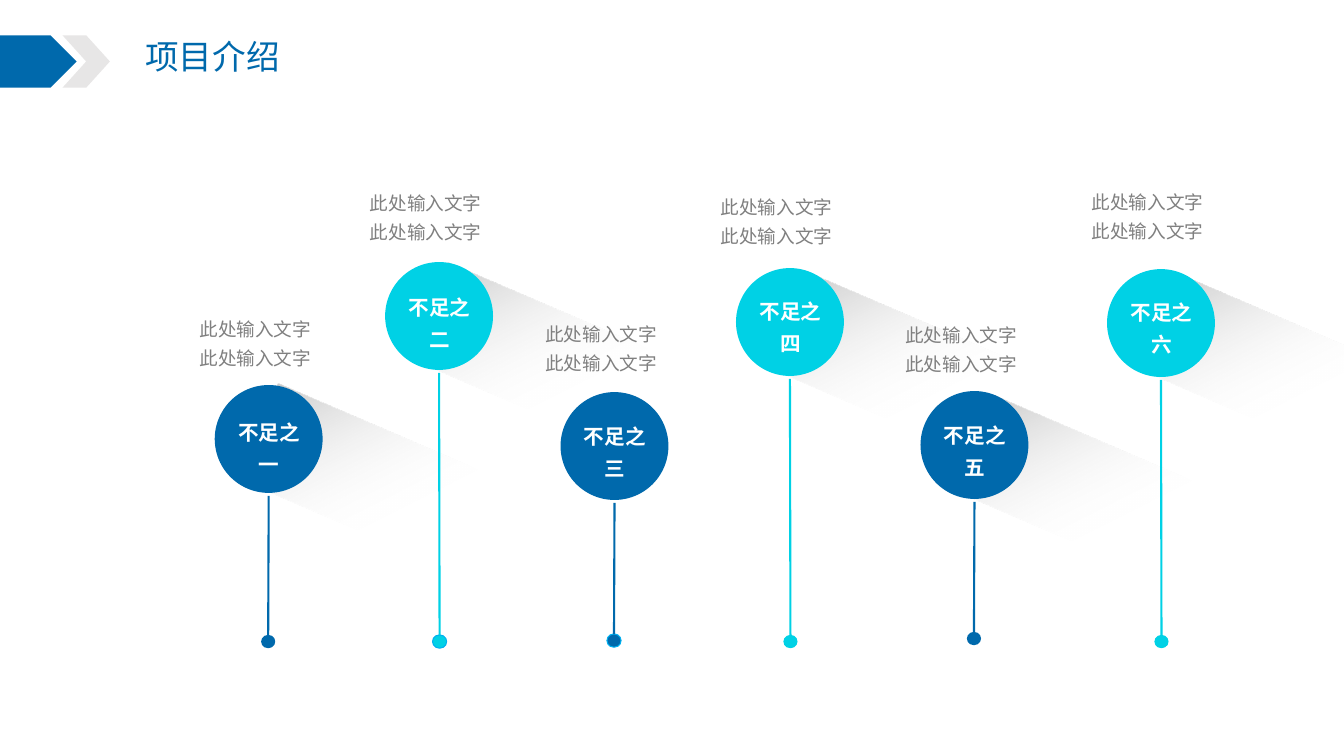
from lxml import etree
from pptx import Presentation
from pptx.dml.color import RGBColor
from pptx.enum import shapes, text
from pptx.oxml import ns
from pptx.util import Inches, Pt

FONT = "Noto Sans CJK SC"
BLUE, CYAN, GREY, SILVER, WHITE = "0069AC", "00D1E5", "808080", "E7E6E6", "FFFFFF"
DOT_OUTLINE = "00B0F0"
TITLE = "项目介绍"
CAPTION = ["此处输入文字", "此处输入文字"]
DIAMETER, DOT_WIDTH, DOT_HEIGHT, STEM_GAP = 1.07, 0.14, 0.13, 0.03

# label, colour, circle (left, top), label top, caption top, dot (left, top), outlined, shadow (left, top)
PINS = [
    ("不足之一", BLUE, (2.13, 3.82), 4.06, 3.04, (2.59, 6.3), False, (2.43, 4.38)),
    ("不足之二", CYAN, (3.82, 2.6), 2.82, 1.79, (4.29, 6.3), True, (4.12, 3.18)),
    ("不足之三", BLUE, (5.56, 3.89), 4.1, 3.09, (6.02, 6.29), True, None),
    ("不足之四", CYAN, (7.3, 2.66), 2.86, 1.83, (7.77, 6.3), False, (7.67, 3.27)),
    ("不足之五", BLUE, (9.13, 3.88), 4.09, 3.1, (9.59, 6.27), False, (9.51, 4.49)),
    ("不足之六", CYAN, (10.98, 2.67), 2.87, 1.78, (11.45, 6.3), False, (11.31, 3.27)),
]


def colour(value):
    return RGBColor.from_string(value)


def add_block(kind, left, top, width, height, fill, outline=None):
    shape = slide.shapes.add_shape(kind, Inches(left), Inches(top), Inches(width), Inches(height))
    shape.shadow.inherit = False
    shape.fill.solid()
    shape.fill.fore_color.rgb = colour(fill)
    if outline:
        shape.line.color.rgb = colour(outline)
        shape.line.width = Pt(0.75)
    else:
        shape.line.fill.background()
    return shape


def add_shadow(left, top):
    shape = add_block(shapes.MSO_SHAPE.RECTANGLE, left, top, 3.11, 1.02, WHITE)
    shape.rotation = 23.3
    gradient = etree.fromstring(
        f'<a:gradFill xmlns:a="{ns.nsuri("a")}" rotWithShape="1"><a:gsLst>'
        '<a:gs pos="0"><a:srgbClr val="BFBFBF"/></a:gs>'
        '<a:gs pos="54000"><a:srgbClr val="FFFFFF"><a:alpha val="0"/></a:srgbClr></a:gs>'
        '</a:gsLst><a:lin ang="2400000" scaled="0"/></a:gradFill>')
    properties = shape.element.spPr
    properties.replace(properties.find(ns.qn("a:solidFill")), gradient)


def write(frame, lines, size, fill, bold=False, align=text.PP_ALIGN.LEFT, spacing=1.0,
          margins=(0.1, 0.05), anchor=text.MSO_ANCHOR.TOP, wrap=True):
    frame.word_wrap = wrap
    frame.auto_size = text.MSO_AUTO_SIZE.NONE
    frame.vertical_anchor = anchor
    frame.margin_left = frame.margin_right = Inches(margins[0])
    frame.margin_top = frame.margin_bottom = Inches(margins[1])
    for index, line in enumerate(lines):
        paragraph = frame.add_paragraph() if index else frame.paragraphs[0]
        paragraph.alignment = align
        paragraph.line_spacing = spacing
        run = paragraph.add_run()
        run.text = line
        run.font.name = FONT
        run.font.size = Pt(size)
        run.font.bold = bold
        run.font.color.rgb = colour(fill)
        east_asian = etree.SubElement(run.font._element, ns.qn("a:ea"))
        east_asian.set("typeface", FONT)


def add_text(left, top, width, height, lines, size, fill, **style):
    box = slide.shapes.add_textbox(Inches(left), Inches(top), Inches(width), Inches(height))
    write(box.text_frame, lines, size, fill, **style)


def add_stem(x, top, dot, fill):
    stem = slide.shapes.add_connector(
        shapes.MSO_CONNECTOR.STRAIGHT, Inches(x), Inches(top), Inches(x), dot.top)
    stem.end_connect(dot, 0)
    stem.line.color.rgb = colour(fill)
    stem.line.width = Pt(1.5)
    etree.SubElement(stem.element.spPr, ns.qn("a:effectLst"))


def add_pin(label, fill, circle, label_top, caption_top, dot_place, outlined):
    left, top = circle
    add_block(shapes.MSO_SHAPE.OVAL, left, top, DIAMETER, DIAMETER, fill)
    add_text(left + 0.17, label_top, 0.74, 0.7, [label], 14.7, WHITE, bold=True,
             align=text.PP_ALIGN.CENTER, spacing=1.3, margins=(0, 0),
             anchor=text.MSO_ANCHOR.MIDDLE)
    dot = add_block(shapes.MSO_SHAPE.ROUNDED_RECTANGLE, *dot_place, DOT_WIDTH, DOT_HEIGHT,
                    fill, DOT_OUTLINE if outlined else None)
    dot.adjustments[0] = 0.5
    add_stem(left + DIAMETER / 2, top + DIAMETER + STEM_GAP, dot, fill)
    add_text(left - 0.25, caption_top, 1.57, 0.68, CAPTION, 13.3, GREY, spacing=1.3)


presentation = Presentation()
presentation.slide_width, presentation.slide_height = Inches(13.33), Inches(7.5)
slide = presentation.slides.add_slide(presentation.slide_layouts[5])

title = slide.shapes.title
title.left, title.top, title.width, title.height = map(Inches, (1.34, 0.31, 1.55, 0.5))
write(title.text_frame, [TITLE], 24, BLUE, wrap=False)

add_block(shapes.MSO_SHAPE.PENTAGON, 0, 0.35, 0.76, 0.52, BLUE)
add_block(shapes.MSO_SHAPE.CHEVRON, 0.62, 0.35, 0.47, 0.52, SILVER)

for *_, shadow in reversed(PINS):
    if shadow:
        add_shadow(*shadow)
for *pin, _ in PINS:
    add_pin(*pin)

presentation.save("out.pptx")
